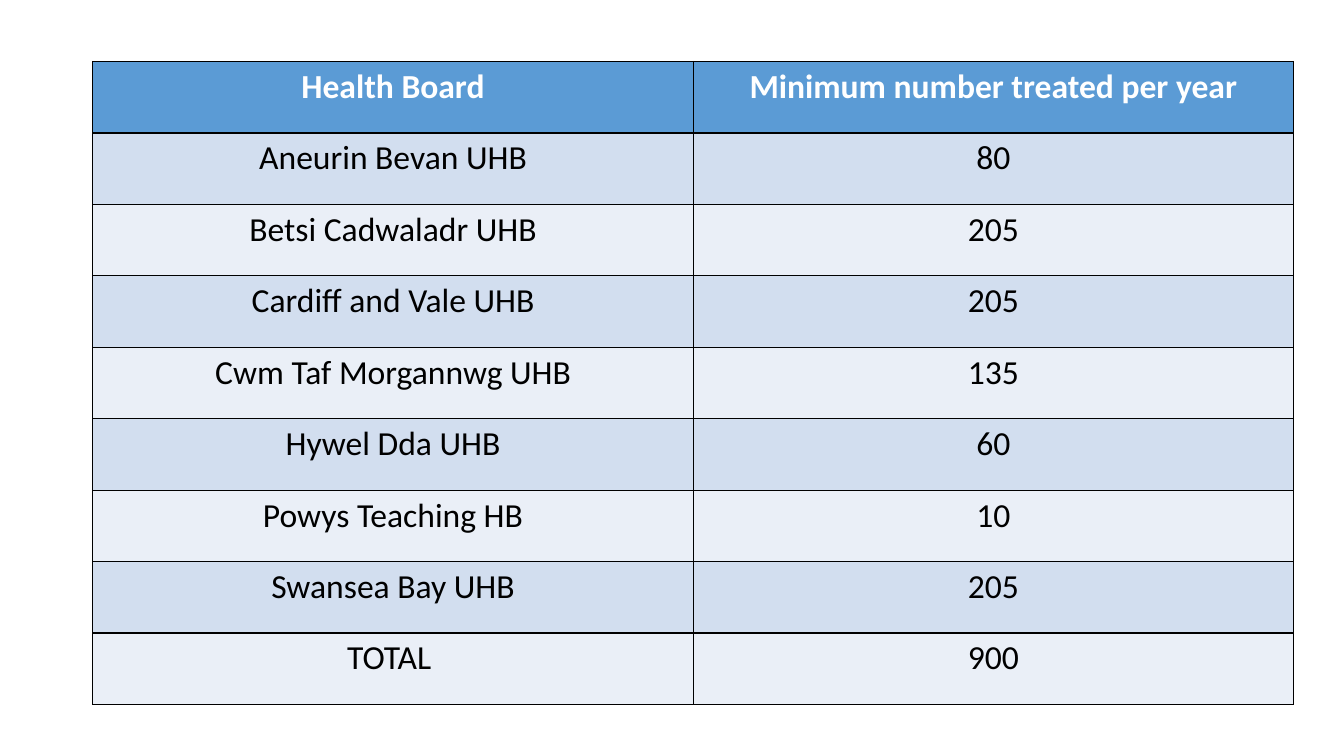
import pptx
import pptx.dml.color
import pptx.enum.text
import pptx.oxml
import pptx.oxml.ns
import pptx.util

Cm = pptx.util.Cm
RGBColor = pptx.dml.color.RGBColor

BLACK = RGBColor(0x00, 0x00, 0x00)
WHITE = RGBColor(0xFF, 0xFF, 0xFF)
HEADER_BLUE = RGBColor(0x5B, 0x9B, 0xD5)
BAND_DARK = RGBColor(0xD2, 0xDE, 0xEF)
BAND_LIGHT = RGBColor(0xEA, 0xEF, 0xF7)

COLUMN_WIDTH = Cm(15.13)
ROW_HEIGHT = Cm(1.8)

HEADINGS = ("Health Board", "Minimum number treated per year")
TREATED = {
    "Aneurin Bevan UHB": 80,
    "Betsi Cadwaladr UHB": 205,
    "Cardiff and Vale UHB": 205,
    "Cwm Taf Morgannwg UHB": 135,
    "Hywel Dda UHB": 60,
    "Powys Teaching HB": 10,
    "Swansea Bay UHB": 205,
}


def write_text(cell, text, color=BLACK, bold=False, size=24, font="Calibri"):
    paragraph = cell.text_frame.paragraphs[0]
    paragraph.alignment = pptx.enum.text.PP_ALIGN.CENTER
    run = paragraph.add_run()
    run.text = text
    run.font.name = font
    run.font.size = pptx.util.Pt(size)
    run.font.bold = bold
    run.font.color.rgb = color


def add_borders(cell, color=BLACK, width=1):
    properties = cell._tc.get_or_add_tcPr()
    for side in ("lnL", "lnR", "lnT", "lnB"):
        properties.append(pptx.oxml.parse_xml(
            f'<a:{side} {pptx.oxml.ns.nsdecls("a")} w="{pptx.util.Pt(width)}">'
            f'<a:solidFill><a:srgbClr val="{color}"/></a:solidFill></a:{side}>'
        ))


presentation = pptx.Presentation()
presentation.slide_width = Cm(33.87)
presentation.slide_height = Cm(19.05)
slide = presentation.slides.add_slide(presentation.slide_layouts[6])

rows = [HEADINGS, *TREATED.items(), ("TOTAL ", sum(TREATED.values()))]
table = slide.shapes.add_table(
    len(rows), len(HEADINGS), Cm(2.34), Cm(1.55),
    COLUMN_WIDTH * len(HEADINGS), ROW_HEIGHT * len(rows),
).table

for column in table.columns:
    column.width = COLUMN_WIDTH

for row_index, values in enumerate(rows):
    table.rows[row_index].height = ROW_HEIGHT
    is_header = row_index == 0
    band = BAND_DARK if row_index % 2 else BAND_LIGHT
    for column_index, value in enumerate(values):
        cell = table.cell(row_index, column_index)
        write_text(cell, str(value), color=WHITE if is_header else BLACK, bold=is_header)
        add_borders(cell)
        cell.fill.solid()
        cell.fill.fore_color.rgb = HEADER_BLUE if is_header else band

presentation.save("out.pptx")
